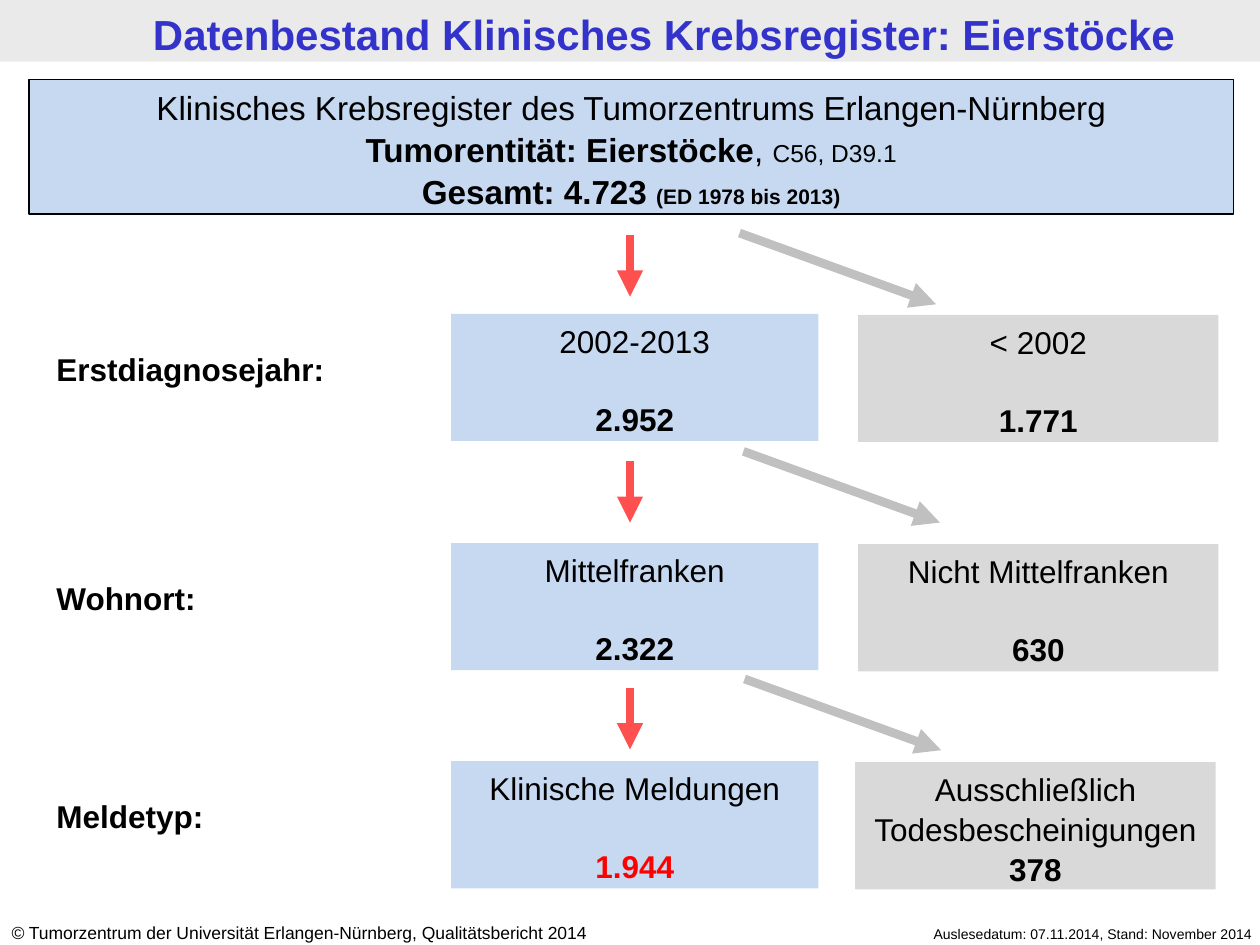
from lxml import etree
from pptx import Presentation
from pptx.dml.color import RGBColor
from pptx.enum.shapes import MSO_CONNECTOR, MSO_SHAPE
from pptx.enum.text import MSO_ANCHOR, MSO_AUTO_SIZE, PP_ALIGN
from pptx.oxml.ns import qn
from pptx.util import Pt

LEFT, CENTER, RIGHT = PP_ALIGN.LEFT, PP_ALIGN.CENTER, PP_ALIGN.RIGHT
TOP, NO_FIT = MSO_ANCHOR.TOP, MSO_AUTO_SIZE.NONE
RECT, STRAIGHT = MSO_SHAPE.RECTANGLE, MSO_CONNECTOR.STRAIGHT

BLACK = RGBColor(0x00, 0x00, 0x00)
TITLE_BLUE = RGBColor(0x33, 0x33, 0xCC)
BAND_GREY = RGBColor(0xEA, 0xEA, 0xEA)
BOX_BLUE = RGBColor(0xC6, 0xD9, 0xF1)
BOX_GREY = RGBColor(0xD9, 0xD9, 0xD9)
ARROW_RED = RGBColor(0xFF, 0x50, 0x50)
ARROW_GREY = RGBColor(0xC0, 0xC0, 0xC0)
RED = RGBColor(0xFF, 0x00, 0x00)

FONT = "Arial"
LINE_SPACING = 1.05
BLANK_LINE = 21.7  # height of one 18 pt line
BOX_HEIGHT = 72.7

# label, box top, kept (name, count, colour), dropped (name, count, left, gap),
# top of the red arrow, start of the grey arrow
ROWS = [
    ("Erstdiagnosejahr:", 179.3, ("2002-2013", "2.952", BLACK),
     ("< 2002", "1.771", 490.3, BLANK_LINE), 134.5, (422.6, 133.2)),
    ("Wohnort:", 310.3, ("Mittelfranken", "2.322", BLACK),
     ("Nicht Mittelfranken", "630", 490.3, BLANK_LINE), 263.7, (424.8, 257.9)),
    ("Meldetyp:", 434.9, ("Klinische Meldungen", "1.944", RED),
     ("Ausschließlich Todesbescheinigungen", "378", 488.7, 0), 393.2, (425.5, 388)),
]


def write(p, text, size=18, bold=False, italic=False, color=BLACK):
    """Add one formatted run to a paragraph."""
    r = p.add_run()
    r.text = text
    r.font.name = FONT
    r.font.size = Pt(size)
    r.font.bold = bold
    r.font.italic = italic
    r.font.color.rgb = color


def prepare(tf):
    tf.word_wrap = True
    tf.auto_size = NO_FIT
    tf.vertical_anchor = TOP


def paragraph(tf, align, first=False, before=0):
    p = tf.paragraphs[0] if first else tf.add_paragraph()
    p.alignment = align
    p.line_spacing = LINE_SPACING
    if before:
        p.space_before = Pt(before)
    return p


def add_title(s, text):
    """Title whose fill forms the grey band across the slide."""
    sp = s.shapes.title
    sp.left, sp.top, sp.width, sp.height = Pt(0), Pt(0), Pt(720), Pt(35.3)
    sp.fill.solid()
    sp.fill.fore_color.rgb = BAND_GREY
    tf = sp.text_frame
    prepare(tf)
    tf.margin_left, tf.margin_right = Pt(46), Pt(7)
    tf.margin_top, tf.margin_bottom = Pt(3.6), Pt(2.9)
    write(paragraph(tf, CENTER, first=True), text, size=24, bold=True, color=TITLE_BLUE)


def add_box(s, x, y, w, h, fill, line=None):
    sp = s.shapes.add_shape(RECT, Pt(x), Pt(y), Pt(w), Pt(h))
    sp.shadow.inherit = False
    sp.fill.solid()
    sp.fill.fore_color.rgb = fill
    if line is None:
        sp.line.fill.background()
    else:
        sp.line.color.rgb = line
        sp.line.width = Pt(0.75)
    prepare(sp.text_frame)
    return sp.text_frame


def add_count_box(s, x, y, w, fill, name, count, gap=BLANK_LINE, color=BLACK):
    tf = add_box(s, x, y, w, BOX_HEIGHT, fill)
    write(paragraph(tf, CENTER, first=True), name)
    write(paragraph(tf, CENTER, before=gap), count, bold=True, color=color)


def add_text(s, x, y, w, h, align=LEFT):
    tf = s.shapes.add_textbox(Pt(x), Pt(y), Pt(w), Pt(h)).text_frame
    prepare(tf)
    return paragraph(tf, align, first=True)


def add_arrow(s, x, y, dx, dy, color):
    c = s.shapes.add_connector(STRAIGHT, Pt(x), Pt(y), Pt(x + dx), Pt(y + dy))
    c.line.color.rgb = color
    c.line.width = Pt(5)
    etree.SubElement(c.line._get_or_add_ln(), qn("a:tailEnd"), type="triangle")
    etree.SubElement(c._element.spPr, qn("a:effectLst"))


def add_header(s):
    tf = add_box(s, 16.6, 45.4, 688.3, 77, BOX_BLUE, line=BLACK)
    p = paragraph(tf, CENTER, first=True)
    write(p, "Klinisches Krebsregister des Tumorzentrums Erlangen-Nürnberg", size=19)
    p = paragraph(tf, CENTER)
    write(p, "Tumorentität: Eierstöcke", size=19, bold=True)
    write(p, ", ", size=19)
    write(p, "C56, D39.1", size=14)
    p = paragraph(tf, CENTER)
    write(p, "Gesamt: 4.723 ", size=19, bold=True)
    write(p, "(ED 1978 bis 2013)", size=12, bold=True)


def add_row(s, label, top, kept, dropped, red_top, grey_start):
    """One selection step: label, kept and dropped cases, and their arrows."""
    write(add_text(s, 25.2, top + 16.2, 198.7, 28.8), label, bold=True)
    name, count, color = kept
    add_count_box(s, 257.8, top, 209.8, BOX_BLUE, name, count, color=color)
    name, count, left, gap = dropped
    add_count_box(s, left, top + 0.6, 206, BOX_GREY, name, count, gap=gap)
    add_arrow(s, 360, red_top, 0, 35, ARROW_RED)
    add_arrow(s, *grey_start, 112.3, 40.7, ARROW_GREY)


def add_footer(s):
    p = add_text(s, -0.5, 522.7, 377, 19.4)
    write(p, "©", size=10, italic=True)
    write(p, " Tumorzentrum der Universität Erlangen-Nürnberg, Qualitätsbericht 2014", size=10)
    p = add_text(s, 478.8, 525, 244, 17.3, align=RIGHT)
    write(p, "Auslesedatum: 07.11.2014, Stand: November 2014", size=8)


def main():
    prs = Presentation()
    prs.slide_width, prs.slide_height = Pt(720), Pt(540)
    s = prs.slides.add_slide(prs.slide_layouts[5])  # title only
    add_title(s, "Datenbestand Klinisches Krebsregister: Eierstöcke")
    add_header(s)
    for row in ROWS:
        add_row(s, *row)
    add_footer(s)
    prs.save("out.pptx")


if __name__ == "__main__":
    main()
